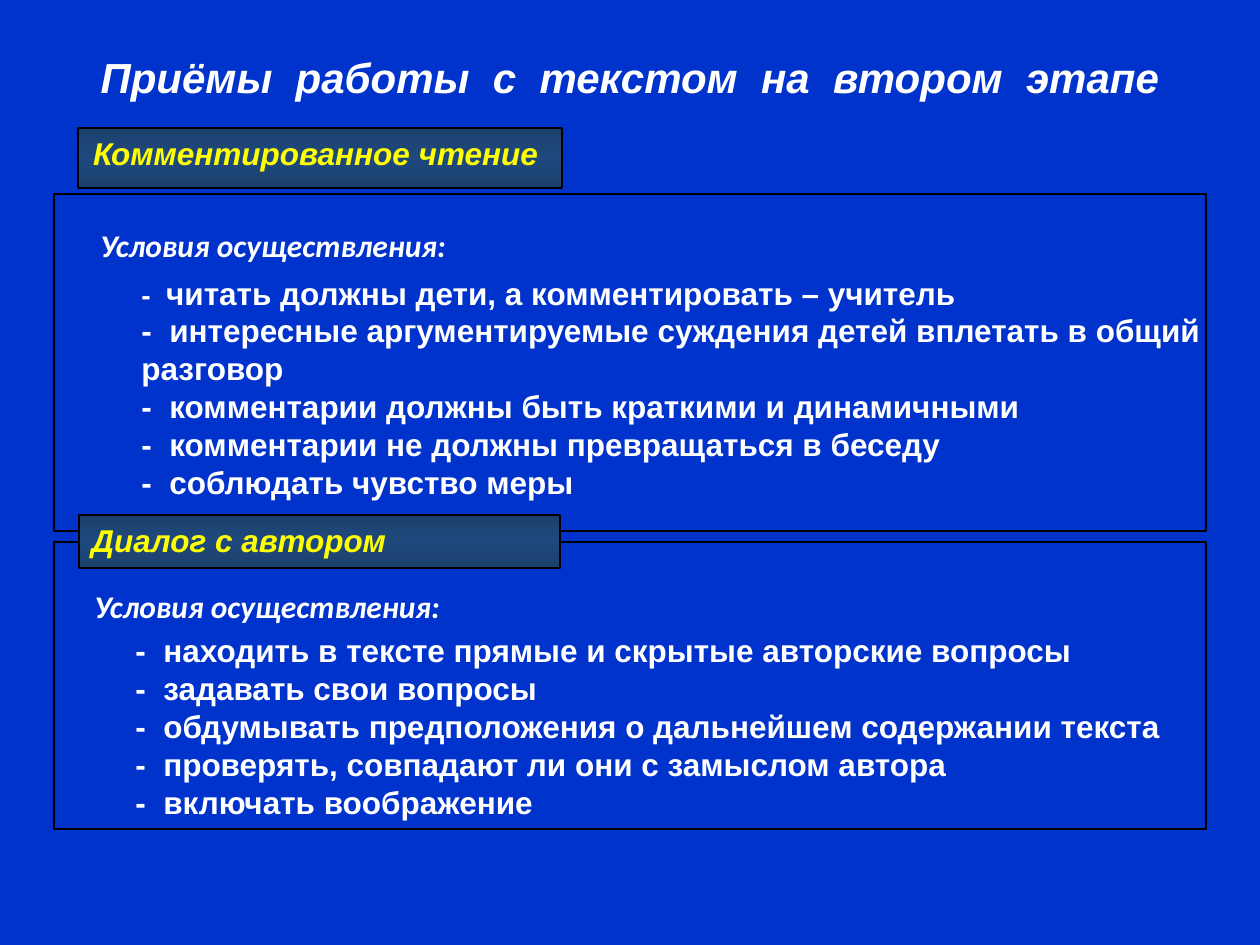
"""Builds a slide on two ways of working with a text at the second stage."""
from copy import deepcopy

from pptx import Presentation
from pptx.dml.color import RGBColor
from pptx.enum.shapes import MSO_SHAPE as SHAPE
from pptx.enum.text import MSO_ANCHOR as ANCHOR, MSO_AUTO_SIZE as AUTO, PP_ALIGN as ALIGN
from pptx.util import Emu, Pt

BLUE = RGBColor(0x00, 0x33, 0xCC)
WHITE = RGBColor(0xFF, 0xFF, 0xFF)
BLACK = RGBColor(0x00, 0x00, 0x00)
YELLOW = RGBColor(0xFF, 0xFF, 0x00)
NAVY = RGBColor(0x1B, 0x40, 0x6D)
STEEL = RGBColor(0x1F, 0x49, 0x7D)

CONDITIONS = "Условия осуществления:"
COMMENTED_READING = [
    "читать должны дети, а комментировать – учитель",
    "интересные аргументируемые суждения детей вплетать в общий разговор",
    "комментарии должны быть краткими и динамичными",
    "комментарии не должны превращаться в беседу",
    "соблюдать чувство меры",
]
DIALOGUE = [
    "находить в тексте прямые и скрытые авторские вопросы",
    "задавать свои вопросы",
    "обдумывать предположения о дальнейшем содержании текста",
    "проверять, совпадают ли они с замыслом автора",
    "включать воображение",
]


def px(*values):
    return [Emu(round(v * 914400 / 126)) for v in values]


def style(p, size=18, name="Arial", color=WHITE, italic=True, align=ALIGN.LEFT):
    p.alignment = align
    f = p.font
    f.size, f.name, f.bold, f.italic = Pt(size), name, True, italic
    f.color.rgb = color


def add_text(shapes, box, wrap=False):
    tf = shapes.add_textbox(*px(*box)).text_frame
    tf.word_wrap = wrap
    tf.auto_size = AUTO.SHAPE_TO_FIT_TEXT
    return tf


def add_line(shapes, box, text, **look):
    p = add_text(shapes, box).paragraphs[0]
    p.add_run().text = text
    style(p, **look)


def add_items(shapes, box, items, wrap, first_dash):
    tf = add_text(shapes, box, wrap)
    tf.vertical_anchor = ANCHOR.MIDDLE
    for i, item in enumerate(items):
        p = tf.paragraphs[0] if i == 0 else tf.add_paragraph()
        style(p, italic=False)
        dash = p.add_run()
        dash.text = "-  "
        if i == 0:
            dash.font.size = Pt(first_dash)
        p.add_run().text = item


def add_rect(shapes, box, width):
    sp = shapes.add_shape(SHAPE.RECTANGLE, *px(*box))
    sp.shadow.inherit = False
    sp.line.color.rgb = BLACK
    sp.line.width = Pt(width)
    sp.fill.background()
    return sp


def add_tag(shapes, box, text, align):
    sp = add_rect(shapes, box, 1.25)
    fill = sp.fill
    fill.gradient()
    fill.gradient_angle = 90
    first = fill.gradient_stops[0]._gs
    first.addnext(deepcopy(first))
    for stop, at, color in zip(fill.gradient_stops, (0, 0.5, 1), (NAVY, STEEL, NAVY)):
        stop.position = at
        stop.color.rgb = color
    tf = sp.text_frame
    tf.word_wrap = True
    tf.auto_size = AUTO.SHAPE_TO_FIT_TEXT
    tf.vertical_anchor = ANCHOR.TOP
    p = tf.paragraphs[0]
    p.add_run().text = text
    style(p, color=YELLOW, align=align)


def add_section(s, title, items, boxes, align=ALIGN.LEFT, wrap=False, first_dash=18):
    shapes = s.shapes.add_group_shape().shapes
    list_box, heading_box, frame_box, tag_box = boxes
    add_items(shapes, list_box, items, wrap, first_dash)
    add_line(shapes, heading_box, CONDITIONS, name="Calibri")
    add_rect(shapes, frame_box, 0.75)
    add_tag(shapes, tag_box, title, align)


def main():
    prs = Presentation()
    prs.slide_width, prs.slide_height = px(1260, 945)
    s = prs.slides.add_slide(prs.slide_layouts[6])
    s.background.fill.solid()
    s.background.fill.fore_color.rgb = BLUE
    add_line(s.shapes, (83, 45, 1094, 63), "Приёмы  работы  с  текстом  на  втором  этапе",
             size=24, align=ALIGN.CENTER)
    add_section(s, "Комментированное чтение ", COMMENTED_READING,
                [(129, 266, 1113, 242), (88, 220, 375, 59),
                 (54, 194, 1152, 337), (78, 128, 484, 60)],
                align=ALIGN.CENTER, wrap=True, first_dash=16)
    add_section(s, "Диалог с автором", DIALOGUE,
                [(123, 624, 1061, 204), (82, 581, 375, 50),
                 (54, 542, 1152, 287), (79, 515, 481, 53)])
    prs.save("out.pptx")


if __name__ == "__main__":
    main()
